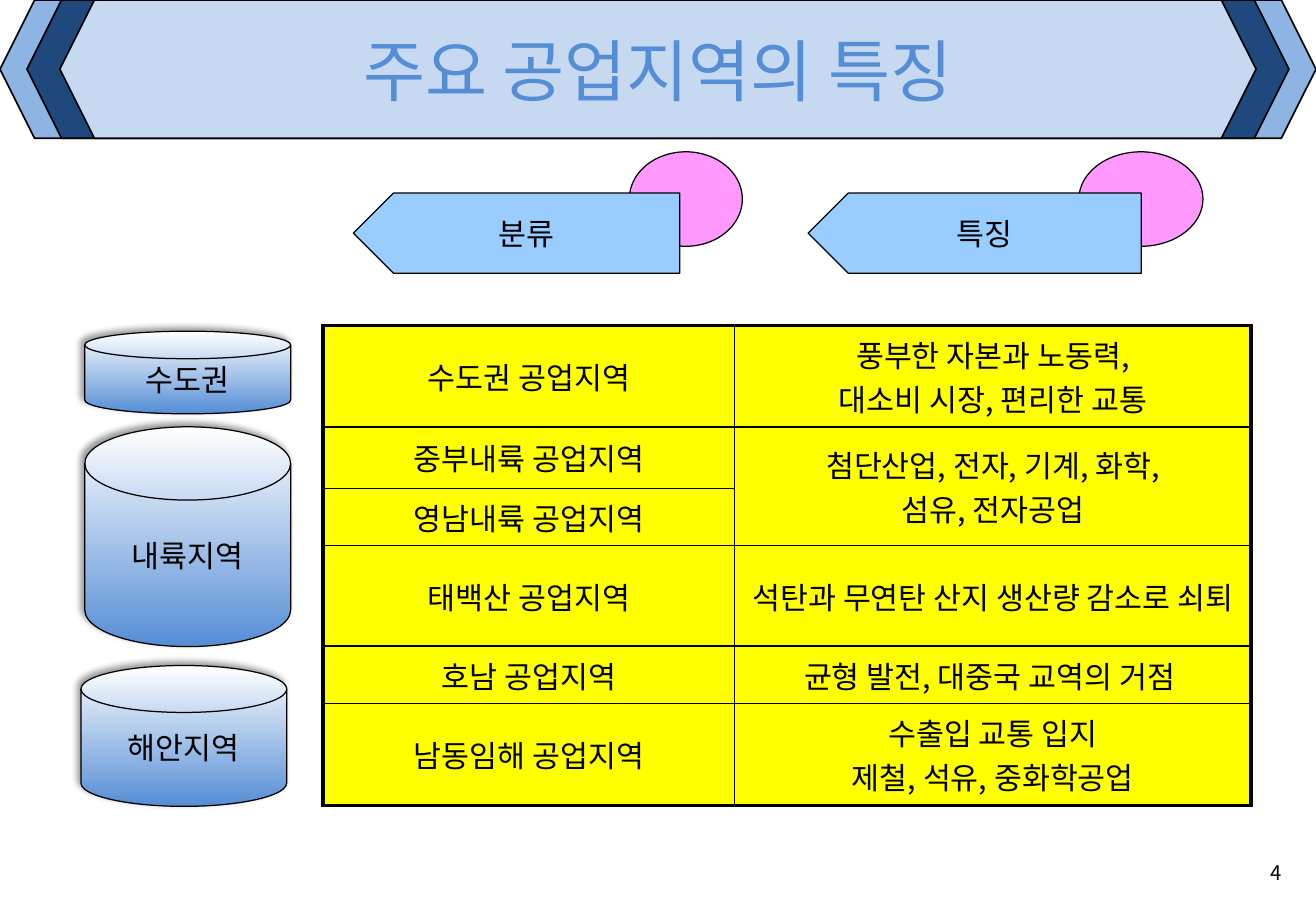
from lxml.etree import SubElement
from pptx import Presentation
from pptx.dml.color import RGBColor
from pptx.enum.shapes import MSO_SHAPE as SHAPE
from pptx.enum.text import MSO_ANCHOR as ANCHOR, PP_ALIGN as ALIGN
from pptx.oxml.ns import qn
from pptx.util import Pt

FONT = "Noto Sans CJK KR"
WIDTH, HEIGHT, BANNER_H = 780, 540, 82
TITLE = "주요 공업지역의 특징"
PAGE = "4 "
BANNER = [(0, "8EB4E3"), (16, "1F497D"), (35.5, "C6D9F1")]
HEADERS = [
    ("분류", 209.5, 193.5, 373, 67),
    ("특징", 479, 197.5, 639.5, 73.5),
]
REGIONS = [
    ("수도권", 50.3, 196.3, 49),
    ("내륙지역", 50.3, 253, 130.3),
    ("해안지역", 48, 394.5, 83.5),
]
ROWS = [
    (60, "수도권 공업지역", "풍부한 자본과 노동력,\n대소비 시장, 편리한 교통"),
    (36.5, "중부내륙 공업지역", "첨단산업, 전자, 기계, 화학,\n섬유, 전자공업"),
    (34, "영남내륙 공업지역", ""),
    (59.5, "태백산 공업지역", "석탄과 무연탄 산지 생산량 감소로 쇠퇴"),
    (34, "호남 공업지역", "균형 발전, 대중국 교역의 거점 "),
    (60.5, "남동임해 공업지역", "수출입 교통 입지\n제철, 석유, 중화학공업"),
]
COLS = [244, 306]


def rgb(color):
    return RGBColor.from_string(color)


def write(tf, text, size=18, color="000000", align=ALIGN.CENTER):
    tf.text = text
    for p in tf.paragraphs:
        p.alignment = align
        p.font.size = Pt(size)
        p.font.name = FONT
        p.font.color.rgb = rgb(color)
        SubElement(p._p.pPr.find(qn("a:defRPr")), qn("a:ea"), typeface=FONT)


def add_text(box, text, size, color, align):
    tb = slide.shapes.add_textbox(*map(Pt, box))
    tb.text_frame.word_wrap = True
    tb.text_frame.vertical_anchor = ANCHOR.MIDDLE
    write(tb.text_frame, text, size, color, align)


def add_shape(kind, box, fill=None, text="", line=0.75):
    sp = slide.shapes.add_shape(kind, *map(Pt, box))
    sp.shadow.inherit = False
    if fill:
        sp.fill.solid()
        sp.fill.fore_color.rgb = rgb(fill)
    sp.line.color.rgb = rgb("000000")
    sp.line.width = Pt(line)
    if text:
        sp.text_frame.word_wrap = False
        sp.text_frame.vertical_anchor = ANCHOR.MIDDLE
        write(sp.text_frame, text)
    return sp


def add_disk(text, x, y, h):
    sp = add_shape(SHAPE.FLOWCHART_MAGNETIC_DISK, (x, y, 122, h), text=text)
    sp.fill.gradient()
    sp.fill.gradient_angle = 90
    for stop, color in zip(sp.fill.gradient_stops, ("558ED5", "FFFFFF")):
        stop.color.rgb = rgb(color)
    effects = sp._element.spPr.find(qn("a:effectLst"))
    shadow = SubElement(effects, qn("a:outerShdw"), blurRad=str(Pt(4)),
                        dist=str(Pt(3)), dir="13500000", algn="br", rotWithShape="0")
    black = SubElement(shadow, qn("a:srgbClr"), val="000000")
    SubElement(black, qn("a:alpha"), val="40000")


def set_borders(cell, widths):
    for side, width in zip("LRTB", widths):
        ln = SubElement(cell._tc.get_or_add_tcPr(), qn(f"a:ln{side}"), w=str(Pt(width)))
        SubElement(SubElement(ln, qn("a:solidFill")), qn("a:srgbClr"), val="000000")


def add_region_table(x, y):
    heights = [row[0] for row in ROWS]
    frame = slide.shapes.add_table(len(ROWS), len(COLS), Pt(x), Pt(y),
                                   Pt(sum(COLS)), Pt(sum(heights)))
    table = frame.table
    table.first_row = table.horz_banding = False
    for col, width in zip(table.columns, COLS):
        col.width = Pt(width)
    last = len(ROWS) - 1
    for i, (height, *texts) in enumerate(ROWS):
        table.rows[i].height = Pt(height)
        for j, text in enumerate(texts):
            cell = table.cell(i, j)
            outer = (j == 0, j == 1, i == 0, i == last)
            set_borders(cell, [2.25 if edge else 1 for edge in outer])
            cell.fill.solid()
            cell.fill.fore_color.rgb = rgb("FFFF00")
            cell.vertical_anchor = ANCHOR.MIDDLE
            write(cell.text_frame, text)
    table.cell(1, 1).merge(table.cell(2, 1))


prs = Presentation()
prs.slide_width, prs.slide_height = Pt(WIDTH), Pt(HEIGHT)
slide = prs.slides.add_slide(prs.slide_layouts[6])

for inset, color in BANNER:
    add_shape(SHAPE.HEXAGON, (inset, 0, WIDTH - 2 * inset, BANNER_H), color, line=1)
add_text((0, 0, WIDTH, BANNER_H + 1), TITLE, 40, "558ED5", ALIGN.CENTER)
add_text((702, 502.5, 67.5, 29), PAGE, 12, "000000", ALIGN.RIGHT)

for text, x, w, oval_x, oval_w in HEADERS:
    add_shape(SHAPE.OVAL, (oval_x, 90, oval_w, 56), "FF99FF")
    tag = add_shape(SHAPE.PENTAGON, (x, 114.5, w, 47.5), "99CCFF", text)
    tag._element.spPr.find(qn("a:xfrm")).set("flipH", "1")

for region in REGIONS:
    add_disk(*region)
add_region_table(191.5, 193)

prs.save("out.pptx")
